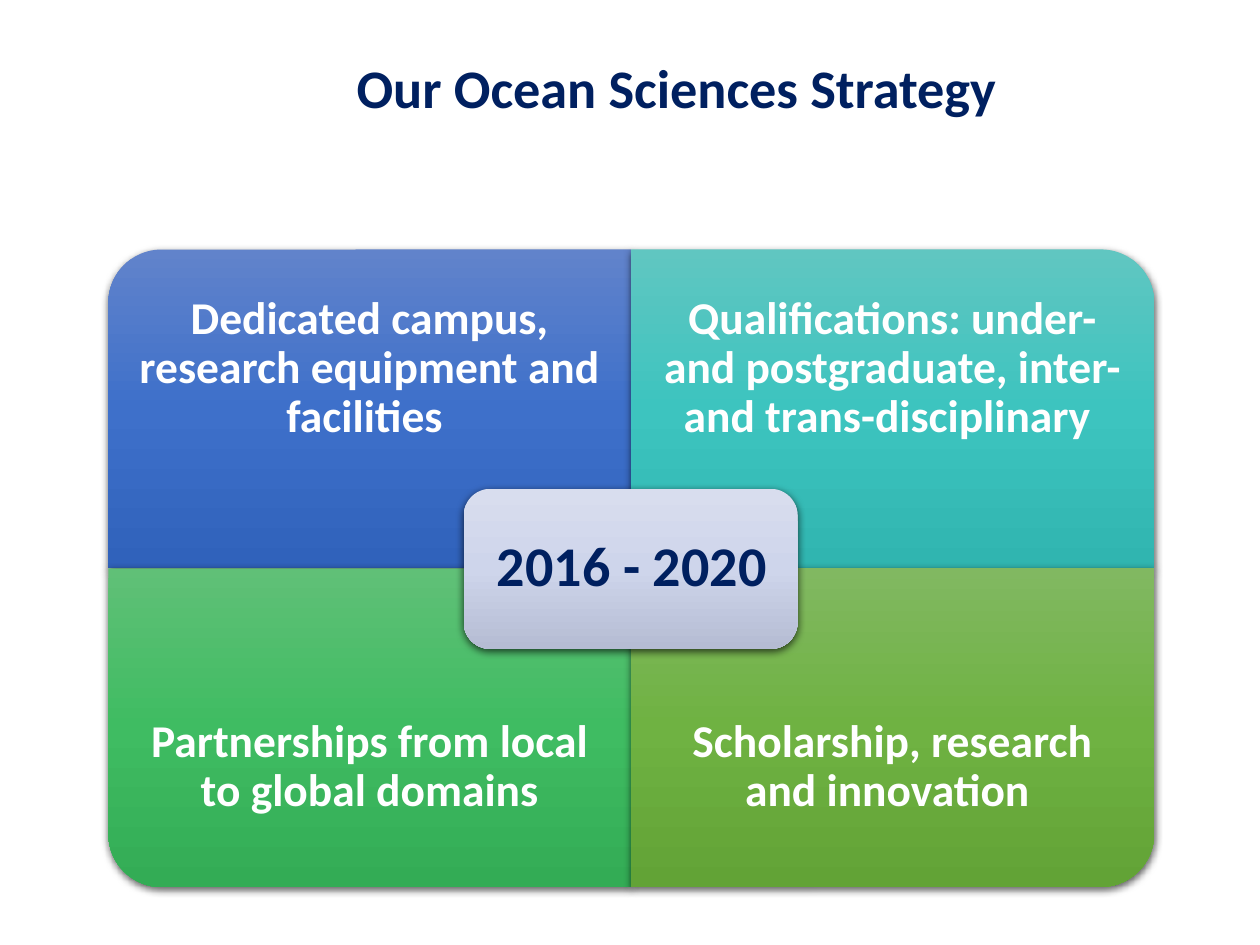
import lxml.etree
import pptx
import pptx.dml.color
import pptx.enum.shapes
import pptx.enum.text
import pptx.oxml
import pptx.oxml.ns
import pptx.util

Inches = pptx.util.Inches
SHAPES = pptx.enum.shapes.MSO_SHAPE
NAVY, WHITE = "002060", "FFFFFF"
LEFT, TOP, QUARTER_W, QUARTER_H = 0.86, 1.98, 4.15, 2.53
LABEL_H = 1.9
# column, row, rotation, gradient, label
QUARTERS = [
    (0, 0, 270, ("6183CB", "3E70CA", "3062BB"),
     "Dedicated campus, research equipment and facilities "),
    (1, 0, 0, ("60C6C1", "3DC4BF", "30B5B0"),
     "Qualifications: under- and postgraduate, inter- and trans-disciplinary "),
    (0, 1, 180, ("60C077", "3FBC62", "33AC55"),
     "Partnerships from local to global domains"),
    (1, 1, 90, ("81B861", "6FB242", "62A336"),
     "Scholarship, research and innovation "),
]


def rgb(value):
    """Return the colour for a hex string."""
    return pptx.dml.color.RGBColor.from_string(value)


def add_run(paragraph, text, size, color):
    """Add a bold Calibri run to a paragraph."""
    run = paragraph.add_run()
    run.text = text
    run.font.name = "Calibri"
    run.font.size = pptx.util.Pt(size)
    run.font.bold = True
    run.font.color.rgb = rgb(color)


def set_margins(frame, horizontal, vertical):
    """Set the inner margins of a text frame."""
    frame.margin_left = frame.margin_right = Inches(horizontal)
    frame.margin_top = frame.margin_bottom = Inches(vertical)


def style_panel(panel, colors):
    """Give a panel an upright vertical gradient and a soft shadow."""
    panel.line.fill.background()
    panel.fill.background()
    namespace = pptx.oxml.ns.nsdecls("a")
    stops = "".join(
        f'<a:gs pos="{i * 50000}"><a:srgbClr val="{color}"/></a:gs>'
        for i, color in enumerate(colors))
    gradient = pptx.oxml.parse_xml(
        f'<a:gradFill {namespace} rotWithShape="0"><a:gsLst>{stops}</a:gsLst>'
        '<a:lin ang="5400000" scaled="0"/></a:gradFill>')
    properties = panel.element.spPr
    no_fill = properties.find(pptx.oxml.ns.qn("a:noFill"))
    properties.replace(no_fill, gradient)
    properties.append(pptx.oxml.parse_xml(
        f'<a:effectLst {namespace}><a:outerShdw blurRad="57150" dist="19050" '
        'dir="5400000" algn="ctr" rotWithShape="0"><a:srgbClr val="000000">'
        '<a:alpha val="63000"/></a:srgbClr></a:outerShdw></a:effectLst>'))


def add_panel(slide, preset, left, top, width, height, colors, rotation=0):
    """Add a panel that covers the given box once it is rotated."""
    if rotation % 180:
        left += (width - height) / 2
        top += (height - width) / 2
        width, height = height, width
    panel = slide.shapes.add_shape(
        preset, Inches(left), Inches(top), Inches(width), Inches(height))
    panel.rotation = rotation
    style_panel(panel, colors)


def add_label(slide, left, top, width, height, text, size, color, margin):
    """Add a centred, wrapped label."""
    frame = slide.shapes.add_textbox(
        Inches(left), Inches(top), Inches(width), Inches(height)).text_frame
    frame.word_wrap = True
    frame.vertical_anchor = pptx.enum.text.MSO_ANCHOR.MIDDLE
    set_margins(frame, margin, margin)
    paragraph = frame.paragraphs[0]
    paragraph.alignment = pptx.enum.text.PP_ALIGN.CENTER
    paragraph.line_spacing = 0.9
    add_run(paragraph, text, size, color)


def add_title(slide, text):
    """Place and fill the title placeholder."""
    title = slide.shapes.title
    title.left, title.top = Inches(2.76), Inches(0.39)
    title.width, title.height = Inches(5.76), Inches(0.59)
    frame = title.text_frame
    frame.word_wrap = True
    frame.auto_size = pptx.enum.text.MSO_AUTO_SIZE.SHAPE_TO_FIT_TEXT
    frame.vertical_anchor = pptx.enum.text.MSO_ANCHOR.TOP
    set_margins(frame, 0.07, 0.04)
    paragraph = frame.paragraphs[0]
    paragraph.alignment = pptx.enum.text.PP_ALIGN.LEFT
    add_run(paragraph, text, 31, NAVY)


def add_quarter(slide, column, row, rotation, colors, text):
    """Add one quarter of the matrix with its label at the outer edge."""
    left = LEFT + column * QUARTER_W
    top = TOP + row * QUARTER_H
    add_panel(slide, SHAPES.ROUND_1_RECTANGLE, left, top,
              QUARTER_W, QUARTER_H, colors, rotation)
    label_top = top + row * (QUARTER_H - LABEL_H)
    add_label(slide, left, label_top, QUARTER_W, LABEL_H, text, 26, WHITE, 0.2)


def main():
    """Build the strategy slide."""
    deck = pptx.Presentation()
    deck.slide_width, deck.slide_height = Inches(10), Inches(7.5)
    slide = deck.slides.add_slide(deck.slide_layouts[5])
    add_title(slide, "Our Ocean Sciences Strategy")
    for quarter in QUARTERS:
        add_quarter(slide, *quarter)
    add_panel(slide, SHAPES.ROUNDED_RECTANGLE, 3.68, 3.88, 2.65, 1.27,
              ("D8DDEE", "CED5EB", "B5BCD3"))
    add_label(slide, 3.75, 3.94, 2.53, 1.14, "2016 - 2020", 32, NAVY, 0.13)
    deck.save("out.pptx")


if __name__ == "__main__":
    main()
